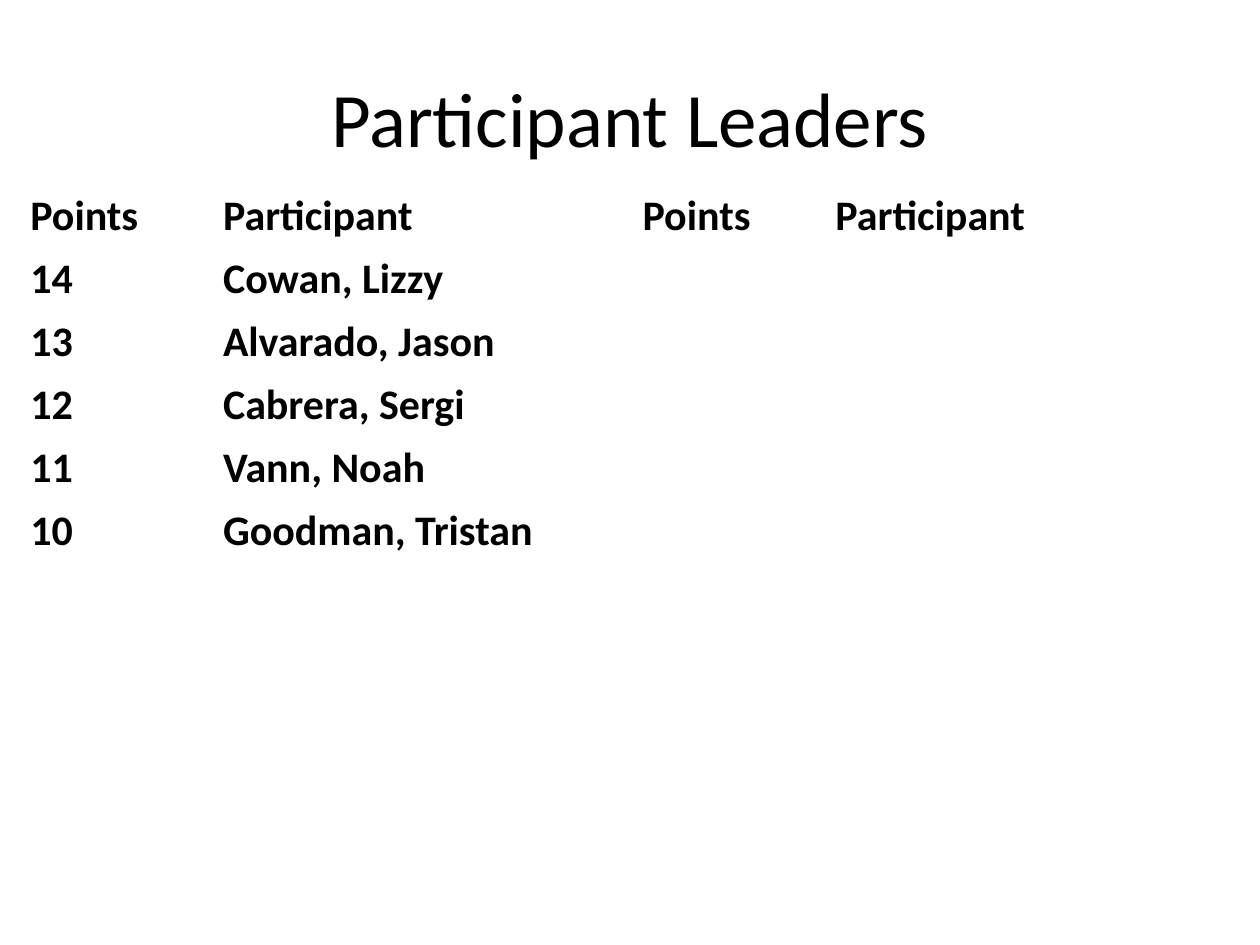
from lxml.etree import SubElement
from pptx import Presentation
from pptx.dml.color import RGBColor
from pptx.enum.text import MSO_ANCHOR, PP_ALIGN
from pptx.oxml.ns import qn
from pptx.util import Inches, Pt

TITLE = "Participant Leaders"
HEADS = ["Points", "Participant"] * 2
LEADERS = [
    ("14", "Cowan, Lizzy"),
    ("13", "Alvarado, Jason"),
    ("12", "Cabrera, Sergi"),
    ("11", "Vann, Noah"),
    ("10", "Goodman, Tristan"),
]
ROWS, ROW_H = 11, 0.5
WIDTHS = [1.53, 3.33] * 2
WHITE, BLACK = "FFFFFF", "000000"
TITLE_FONT = {"name": "Calibri", "size": Pt(44)}
CELL_FONT = {"name": "Calibri", "size": Pt(24), "bold": True}


def color(target, code):
    target.rgb = RGBColor.from_string(code)


def style(font, values):
    for key, value in values.items():
        setattr(font, key, value)
    color(font.color, BLACK)


def border(cell, last):
    props = cell._tc.get_or_add_tcPr()
    for side in "LRTB":
        width = Pt(3 if last and side == "B" else 1)
        line = SubElement(props, qn(f"a:ln{side}"), w=str(width))
        SubElement(SubElement(line, qn("a:solidFill")), qn("a:srgbClr"), val=WHITE)


def add_title(slide):
    box = slide.shapes.add_textbox(Inches(0.5), Inches(0.3), Inches(9), Inches(1.25))
    frame = box.text_frame
    frame.word_wrap = True
    frame.vertical_anchor = MSO_ANCHOR.MIDDLE
    para = frame.paragraphs[0]
    para.text, para.alignment = TITLE, PP_ALIGN.CENTER
    style(para.runs[0].font, TITLE_FONT)


def add_leaders(slide):
    table = slide.shapes.add_table(
        ROWS, len(WIDTHS), Inches(0.14), Inches(1.46),
        Inches(sum(WIDTHS)), Inches(ROWS * ROW_H)).table
    for col, width in zip(table.columns, WIDTHS):
        col.width = Inches(width)
    lines = [HEADS, *LEADERS]
    for r, row in enumerate(table.rows):
        row.height = Inches(ROW_H)
        texts = lines[r] if r < len(lines) else ()
        for c, cell in enumerate(row.cells):
            border(cell, r == ROWS - 1)
            cell.fill.solid()
            color(cell.fill.fore_color, WHITE)
            if c < len(texts):
                cell.text = texts[c]
                style(cell.text_frame.paragraphs[0].runs[0].font, CELL_FONT)


def main():
    deck = Presentation()
    deck.slide_width, deck.slide_height = Inches(10), Inches(7.5)
    slide = deck.slides.add_slide(deck.slide_layouts[6])
    add_title(slide)
    add_leaders(slide)
    deck.save("out.pptx")


if __name__ == "__main__":
    main()
